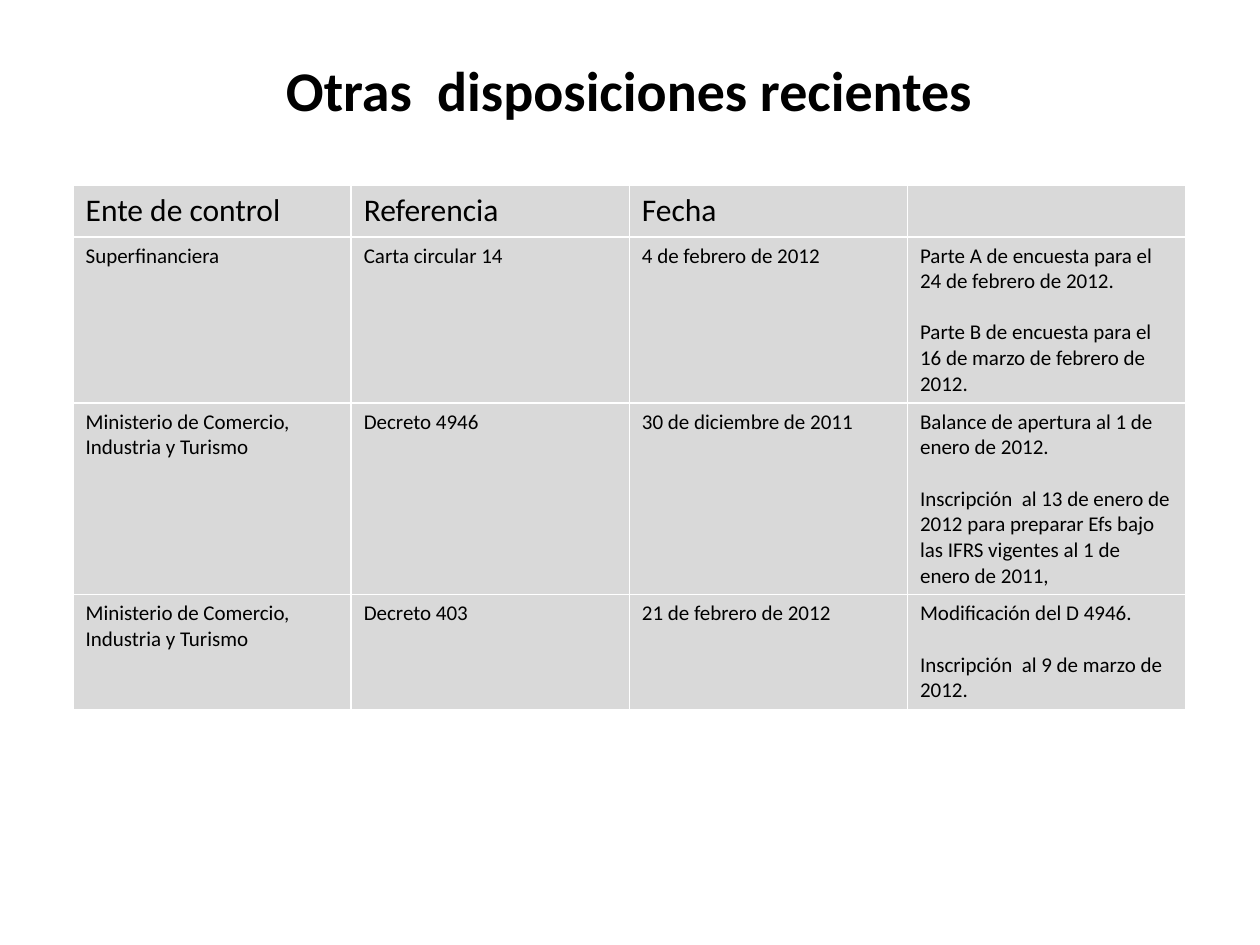
from pptx import Presentation
from pptx.dml.color import RGBColor as Rgb
from pptx.enum.text import MSO_ANCHOR as Anchor, PP_ALIGN as Align
from pptx.util import Inches, Pt

TITLE = "Otras  disposiciones recientes"
HEADER = ["Ente de control", "Referencia", "Fecha", ""]
RULES = [
    ["Superfinanciera", "Carta circular 14", "4 de febrero de 2012",
     ["Parte A de encuesta para el 24 de febrero de 2012.",
      "Parte B de encuesta para el 16 de marzo de febrero de 2012."]],
    ["Ministerio de Comercio, Industria y Turismo", "Decreto 4946",
     "30 de diciembre de 2011",
     ["Balance de apertura al 1 de enero de 2012.",
      "Inscripción  al 13 de enero de 2012 para preparar Efs bajo "
      "las IFRS vigentes al 1 de enero de 2011,"]],
    ["Ministerio de Comercio, Industria y Turismo", "Decreto 403",
     "21 de febrero de 2012",
     ["Modificación del D 4946.", "Inscripción  al 9 de marzo de 2012."]],
]
ROW_HEIGHTS = [0.41, 1.32, 1.52, 0.91]

COLORS = {"text": "000000", "cell": "D9D9D9"}
FORMATS = {
    "title": {"name": "Calibri", "size": Pt(32), "bold": True},
    "header": {"name": "Calibri", "size": Pt(18), "bold": False},
    "body": {"name": "Calibri", "size": Pt(12), "bold": False},
}
WIDTH, HEIGHT = 10, 7.5
LEFT, TABLE_WIDTH, TABLE_TOP = 0.58, 8.83, 1.47
LINE_GAP = Pt(14.65)


def write(frame, texts, style):
    for index, text in enumerate(texts):
        para = frame.paragraphs[0] if index == 0 else frame.add_paragraph()
        if index:
            para.space_before = LINE_GAP
        target = para.font
        if text:
            span = para.add_run()
            span.text = text
            target = span.font
        for key, value in FORMATS[style].items():
            setattr(target, key, value)
        target.color.rgb = Rgb.from_string(COLORS["text"])


def add_title(page):
    box = page.shapes.add_textbox(
        Inches(LEFT), Inches(0.21), Inches(TABLE_WIDTH), Inches(1))
    frame = box.text_frame
    frame.word_wrap = True
    frame.vertical_anchor = Anchor.MIDDLE
    write(frame, [TITLE], "title")
    frame.paragraphs[0].alignment = Align.CENTER


def add_rules(page):
    rows = [HEADER] + RULES
    table = page.shapes.add_table(
        len(rows), len(HEADER), Inches(LEFT), Inches(TABLE_TOP),
        Inches(TABLE_WIDTH), Inches(sum(ROW_HEIGHTS))).table
    table.horz_banding = False
    for row, height in zip(table.rows, ROW_HEIGHTS):
        row.height = Inches(height)
    for r, row in enumerate(rows):
        for c, content in enumerate(row):
            cell = table.cell(r, c)
            cell.fill.solid()
            cell.fill.fore_color.rgb = Rgb.from_string(COLORS["cell"])
            texts = content if isinstance(content, list) else [content]
            write(cell.text_frame, texts, "body" if r else "header")


def main():
    deck = Presentation()
    deck.slide_width, deck.slide_height = Inches(WIDTH), Inches(HEIGHT)
    page = deck.slides.add_slide(deck.slide_layouts[6])
    add_title(page)
    add_rules(page)
    deck.save("out.pptx")


if __name__ == "__main__":
    main()
